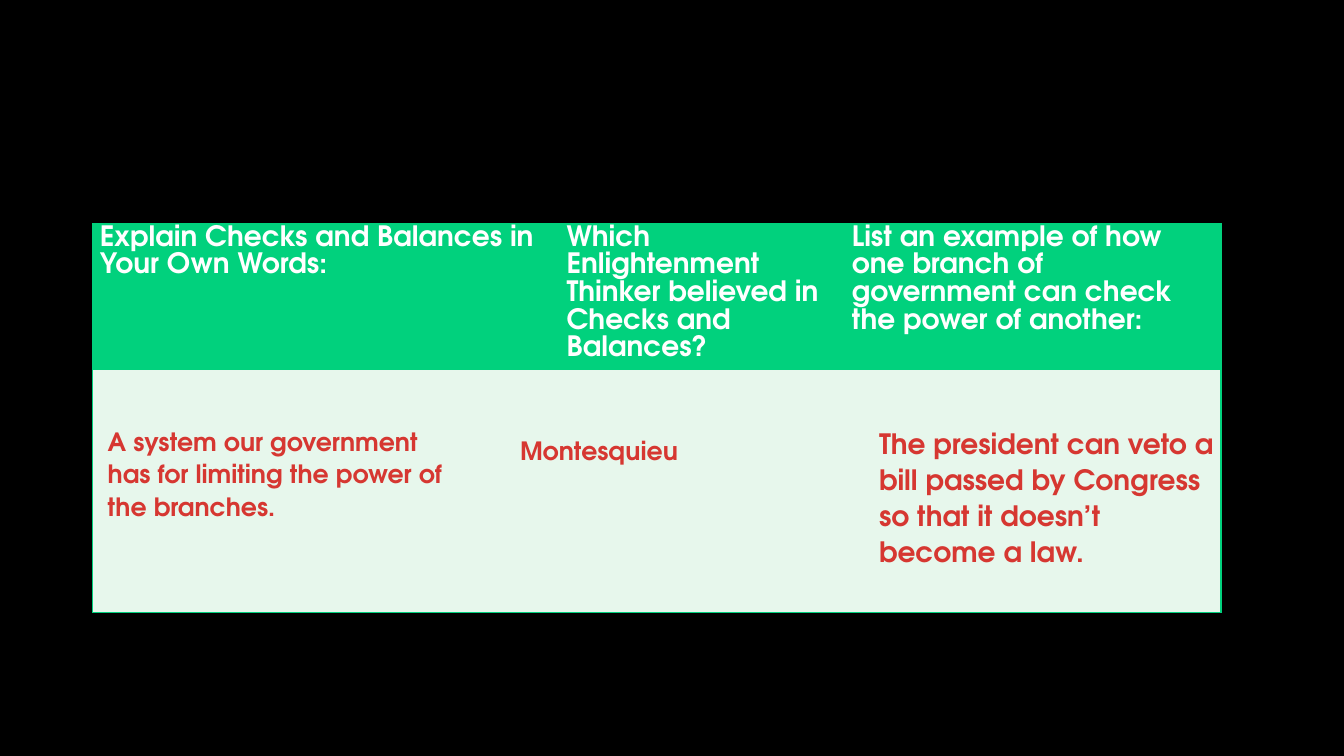
from dataclasses import dataclass

from lxml.etree import SubElement
from pptx import Presentation
from pptx.dml.color import RGBColor
from pptx.enum.text import MSO_AUTO_SIZE
from pptx.oxml.ns import qn
from pptx.slide import Slide
from pptx.table import _Cell
from pptx.text.text import TextFrame
from pptx.util import Inches, Pt


@dataclass(frozen=True)
class Theme:
    font: str = "TeX Gyre Adventor"
    back: str = "000000"
    green: str = "01D17D"
    mint: str = "E7F7EC"
    white: str = "FFFFFF"
    red: str = "D63731"
    large: int = 20
    small: int = 18
    spacing: float = 1.07


@dataclass(frozen=True)
class Column:
    width: float
    title: str


@dataclass(frozen=True)
class Answer:
    left: float
    top: float
    width: float
    height: float
    text: str
    size: int


THEME = Theme()
HEIGHTS = (1.44, 2.42)
COLUMNS = (
    Column(4.63, "Explain Checks and Balances in Your Own Words:"),
    Column(2.83, "Which Enlightenment Thinker believed in Checks and Balances?"),
    Column(3.73, "List an example of how one branch of government can check the power of another:"),
)
ANSWERS = (
    Answer(0.97, 4.16, 3.56, 1.05,
           "A system our government has for limiting the power of the branches.", THEME.small),
    Answer(5.06, 4.25, 2.42, 0.43, "Montesquieu", THEME.small),
    Answer(8.62, 4.16, 3.56, 1.52,
           "The president can veto a bill passed by Congress so that it doesn’t become a law.",
           THEME.large),
)


def write(frame: TextFrame, text: str, *, size: int, color: str) -> None:
    line = frame.paragraphs[0]
    line.line_spacing = THEME.spacing
    run = line.add_run()
    run.text = text
    font = run.font
    font.name, font.size, font.bold = THEME.font, Pt(size), True
    font.color.rgb = RGBColor.from_string(color)


def style(cell: _Cell, fill: str, edges: str) -> None:
    """Fill the cell and rule only the sides named in edges (L, R, T, B)."""
    cell.margin_left = cell.margin_right = Inches(0.07)
    cell.margin_top = cell.margin_bottom = 0
    props = cell._tc.get_or_add_tcPr()
    for side in "LRTB":
        border = SubElement(props, qn(f"a:ln{side}"), w=str(Pt(1)))
        if side in edges:
            solid = SubElement(border, qn("a:solidFill"))
            SubElement(solid, qn("a:srgbClr"), val=THEME.green)
        else:
            SubElement(border, qn("a:noFill"))
    cell.fill.solid()
    cell.fill.fore_color.rgb = RGBColor.from_string(fill)


def add_grid(slide: Slide) -> None:
    last = len(COLUMNS) - 1
    width = sum(column.width for column in COLUMNS)
    grid = slide.shapes.add_table(
        len(HEIGHTS), len(COLUMNS), Inches(0.92), Inches(2.22),
        Inches(width), Inches(sum(HEIGHTS))).table
    for row, height in zip(grid.rows, HEIGHTS):
        row.height = Inches(height)
    for index, column in enumerate(COLUMNS):
        grid.columns[index].width = Inches(column.width)
        edges = "TB" + "L" * (index == 0) + "R" * (index == last)
        head, body = grid.cell(0, index), grid.cell(1, index)
        style(head, THEME.green, edges)
        style(body, THEME.mint, edges)
        write(head.text_frame, column.title, size=THEME.large, color=THEME.white)


def add_answer(slide: Slide, answer: Answer) -> None:
    box = slide.shapes.add_textbox(
        Inches(answer.left), Inches(answer.top), Inches(answer.width), Inches(answer.height))
    frame = box.text_frame
    frame.word_wrap = True
    frame.auto_size = MSO_AUTO_SIZE.SHAPE_TO_FIT_TEXT
    write(frame, answer.text, size=answer.size, color=THEME.red)


def main() -> None:
    deck = Presentation()
    deck.slide_width, deck.slide_height = Inches(13.33), Inches(7.5)
    slide = deck.slides.add_slide(deck.slide_layouts[6])
    slide.background.fill.solid()
    slide.background.fill.fore_color.rgb = RGBColor.from_string(THEME.back)
    add_grid(slide)
    for answer in ANSWERS:
        add_answer(slide, answer)
    deck.save("out.pptx")


if __name__ == "__main__":
    main()
